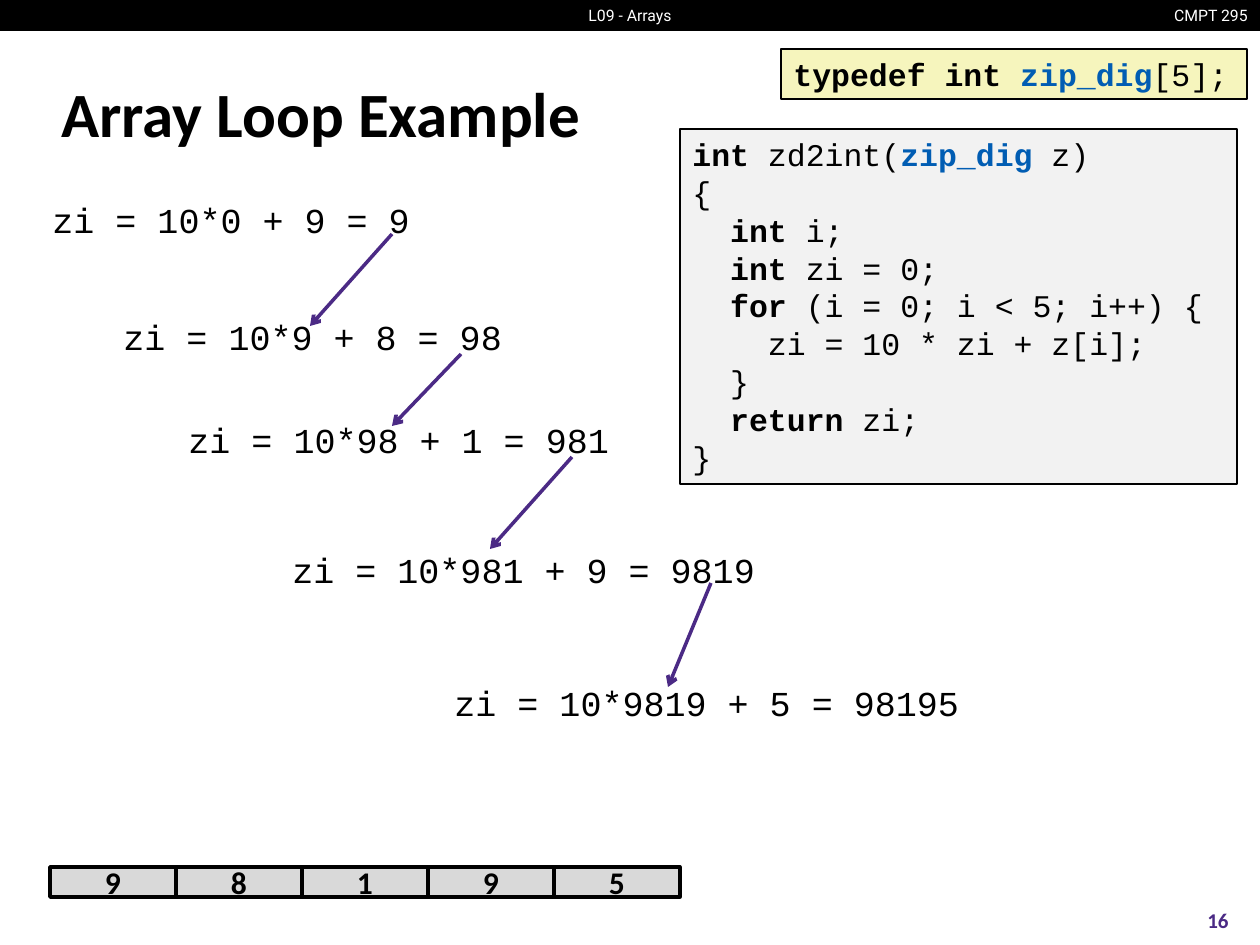
from lxml import etree
from pptx import Presentation
from pptx import util as u
from pptx.dml.color import RGBColor
from pptx.enum import shapes, text
from pptx.oxml.ns import qn

PX = 914400 / 126
BLACK, WHITE, PURPLE, BLUE = "000000", "FFFFFF", "4B2A85", "015DB3"
MONO, SANS, HEADER = "Courier New", "Calibri", "Roboto"
LEFT, CENTER, RIGHT = text.PP_ALIGN.LEFT, text.PP_ALIGN.CENTER, text.PP_ALIGN.RIGHT
TOP, MIDDLE = text.MSO_ANCHOR.TOP, text.MSO_ANCHOR.MIDDLE

TYPEDEF = [["*typedef int ", "@zip_dig", "[5];"]]
# Each line is a list of runs: * marks a keyword, @ a type name
CODE = [
    ["*int", " zd2int(", "@zip_dig ", "z)"],
    ["{"],
    ["  ", "*int ", "i;"],
    ["  ", "*int ", "zi = 0;"],
    ["  ", "*for", " (i = 0; i < 5; i++) {"],
    ["    zi = 10 * zi + z[i];"],
    ["  }"],
    ["  ", "*return ", "zi;"],
    ["}"],
]
# left, top, width, expression
STEPS = [
    (40, 192, 386, "zi = 10*0 + 9 = 9"),
    (111, 309, 407, "zi = 10*9 + 8 = 98"),
    (176, 412, 450, "zi = 10*98 + 1 = 981"),
    (280, 542, 491, "zi = 10*981 + 9 = 9819"),
    (442, 675, 534, "zi = 10*9819 + 5 = 98195"),
]
# Each result carried into the next step: x1, y1, x2, y2
CARRIES = [(392, 234, 310, 326), (461, 354, 392, 426),
           (572, 457, 490, 549), (711, 583, 668, 687)]


def px(n):
    return u.Emu(round(n * PX))


def rgb(value):
    return RGBColor.from_string(value)


def style(run, size, font, color=BLACK, bold=False):
    run.font.size = u.Pt(size)
    run.font.name = font
    run.font.bold = bold
    run.font.color.rgb = rgb(color)


def rectangle(slide, box, fill, line_width=0):
    rect = slide.shapes.add_shape(shapes.MSO_SHAPE.RECTANGLE, *map(px, box))
    rect.shadow.inherit = False
    rect.fill.solid()
    rect.fill.fore_color.rgb = rgb(fill)
    if line_width:
        rect.line.color.rgb = rgb(BLACK)
        rect.line.width = u.Pt(line_width)
    else:
        rect.line.fill.background()
    return rect


def write(frame, words, size, font, color=BLACK, bold=False,
          align=LEFT, anchor=TOP, wrap=False):
    frame.text = words
    frame.word_wrap = wrap
    frame.vertical_anchor = anchor
    paragraph = frame.paragraphs[0]
    paragraph.alignment = align
    if font == MONO:
        paragraph.line_spacing = u.Pt(size * 1.2)
    style(paragraph.runs[0], size, font, color, bold)


def label(slide, box, words, size, font, **look):
    area = slide.shapes.add_textbox(*map(px, box))
    write(area.text_frame, words, size, font, **look)


def header(slide, box):
    left, top, width, height = box
    rectangle(slide, box, BLACK)
    label(slide, (left + width - 102, top, 102, height), "CMPT 295", 9, HEADER,
          color=WHITE, align=RIGHT)
    label(slide, (left + (width - 112) // 2, top, 112, height), "L09 - Arrays", 9, HEADER,
          color=WHITE, align=CENTER)


def code_box(slide, box, fill, lines, size=18):
    frame = rectangle(slide, box, fill, 1).text_frame
    frame.word_wrap = True
    frame.vertical_anchor = TOP
    for i, line in enumerate(lines):
        paragraph = frame.add_paragraph() if i else frame.paragraphs[0]
        paragraph.alignment = LEFT
        paragraph.line_spacing = u.Pt(size * 1.2)
        for part in line:
            run = paragraph.add_run()
            run.text = part.lstrip("*@")
            style(run, size, MONO, BLUE if part[0] == "@" else BLACK, part[0] in "*@")


def carry_arrow(slide, ends):
    arrow = slide.shapes.add_connector(shapes.MSO_CONNECTOR.STRAIGHT, *map(px, ends))
    arrow.line.color.rgb = rgb(PURPLE)
    arrow.line.width = u.Pt(2)
    etree.SubElement(arrow.line._get_or_add_ln(), qn("a:tailEnd"), type="arrow")
    etree.SubElement(arrow._element.spPr, qn("a:effectLst"))


def loop_trace(slide, box):
    x, y = box[:2]
    for left, top, width, expression in STEPS:
        label(slide, (x + left, y + top, width, 55), expression, 20, MONO)
    for x1, y1, x2, y2 in CARRIES:
        carry_arrow(slide, (x + x1, y + y1, x + x2, y + y2))


def digit_array(slide, box, digits):
    left, top, width, height = box
    cell = width // len(digits)
    for i, digit in enumerate(digits):
        frame = rectangle(slide, (left + i * cell, top, cell, height), "D9D9D9", 2).text_frame
        frame.margin_top = frame.margin_bottom = 0
        write(frame, digit, 18, SANS, bold=True, align=CENTER, anchor=MIDDLE)


def main():
    deck = Presentation()
    deck.slide_width, deck.slide_height = px(1260), px(945)
    slide = deck.slides.add_slide(deck.slide_layouts[6])

    # Header, title and page number
    header(slide, (0, 0, 1260, 31))
    label(slide, (49, 60, 1158, 105), "Array Loop Example", 36, SANS,
          bold=True, anchor=MIDDLE, wrap=True)
    label(slide, (1176, 895, 84, 50), "16", 12, SANS, color=PURPLE,
          bold=True, align=CENTER, anchor=MIDDLE, wrap=True)

    # Type definition and function
    code_box(slide, (680, 129, 557, 355), "F2F2F2", CODE)
    code_box(slide, (781, 49, 466, 50), "F6F5BD", TYPEDEF)

    # Value of zi at each pass, and the array it reads
    loop_trace(slide, (0, 0, 1260, 945))
    digit_array(slide, (50, 867, 630, 30), "98195")

    deck.save("out.pptx")


if __name__ == "__main__":
    main()
